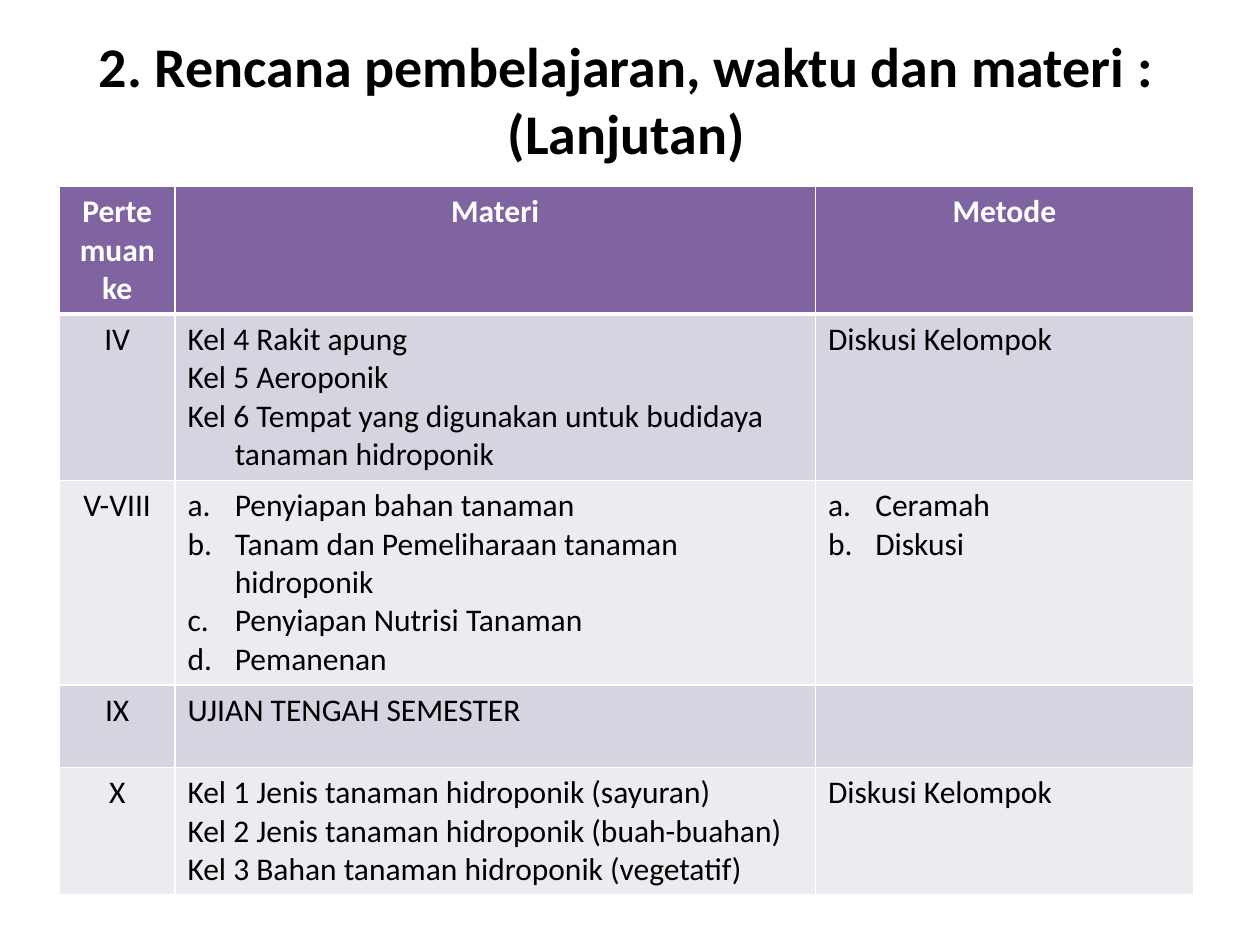
from lxml import etree
from pptx import Presentation
from pptx.dml.color import RGBColor
from pptx.enum import text
from pptx.oxml import ns
from pptx.util import Pt

BLACK = RGBColor(0, 0, 0)
WHITE = RGBColor(0xFF, 0xFF, 0xFF)
PURPLE = RGBColor(0x80, 0x64, 0xA2)
BANDS = [RGBColor(0xD8, 0xD3, 0xE0), RGBColor(0xED, 0xEA, 0xF0)]
FONT = "Calibri"
LEFT, WIDTH = 34, 648
HANGING = 27

TITLE = "2. Rencana pembelajaran, waktu dan materi : (Lanjutan)"
COLUMN_WIDTHS = [66, 366, 216]
ROW_HEIGHTS = [73, 95, 117, 47, 73]
HEADER = ["Pertemuan ke", "Materi", "Metode"]
# Meeting, topics, methods, paragraph style of topics and methods
MEETINGS = [
    ("IV", ["Kel 4 Rakit apung", "Kel 5 Aeroponik",
            "Kel 6 Tempat yang digunakan untuk budidaya tanaman hidroponik"],
     ["Diskusi Kelompok"], "hanging"),
    ("V-VIII", ["Penyiapan bahan tanaman", "Tanam dan Pemeliharaan tanaman hidroponik",
                "Penyiapan Nutrisi Tanaman", "Pemanenan"],
     ["Ceramah", "Diskusi"], "lettered"),
    ("IX", ["UJIAN TENGAH SEMESTER"], [], "plain"),
    ("X", ["Kel 1 Jenis tanaman hidroponik (sayuran)",
           "Kel 2 Jenis tanaman hidroponik (buah-buahan)",
           "Kel 3 Bahan tanaman hidroponik (vegetatif)"],
     ["Diskusi Kelompok"], "hanging"),
]


def write(frame, lines, style, size, color, bold=False):
    """Write one paragraph per line; style is centred, plain, hanging or lettered."""
    for number, line in enumerate(lines):
        para = frame.add_paragraph() if number else frame.paragraphs[0]
        para.alignment = text.PP_ALIGN.CENTER if style == "centred" else text.PP_ALIGN.LEFT
        if style in ("hanging", "lettered"):
            props = para._p.get_or_add_pPr()
            props.set("marL", str(Pt(HANGING)))
            props.set("indent", str(-Pt(HANGING)))
            if style == "lettered":
                etree.SubElement(props, ns.qn("a:buAutoNum"), type="alphaLcPeriod")
        span = para.add_run()
        span.text = line
        font = span.font
        font.name, font.size, font.bold = FONT, Pt(size), bold
        font.color.rgb = color


def add_borders(cell, top, bottom):
    props = cell._tc.get_or_add_tcPr()
    sides = [("lnL", 1), ("lnR", 1), ("lnT", top), ("lnB", bottom)]
    for position, (side, width) in enumerate(sides):
        line = etree.Element(ns.qn(f"a:{side}"), w=str(Pt(width)))
        fill = etree.SubElement(line, ns.qn("a:solidFill"))
        etree.SubElement(fill, ns.qn("a:srgbClr"), val=str(WHITE))
        props.insert(position, line)


def add_title(page):
    box = page.shapes.add_textbox(Pt(LEFT), Pt(11.5), Pt(WIDTH), Pt(90))
    frame = box.text_frame
    frame.word_wrap = True
    frame.vertical_anchor = text.MSO_ANCHOR.MIDDLE
    write(frame, [TITLE], "centred", 32, BLACK, bold=True)


def add_schedule(page):
    rows = [[([name], "centred") for name in HEADER]]
    for meeting, topics, methods, style in MEETINGS:
        rows.append([([meeting], "centred"), (topics, style), (methods, style)])
    table = page.shapes.add_table(len(rows), len(HEADER), Pt(LEFT), Pt(106.5),
                                  Pt(WIDTH), Pt(sum(ROW_HEIGHTS))).table
    for column, width in zip(table.columns, COLUMN_WIDTHS):
        column.width = Pt(width)
    for index, (row, height) in enumerate(zip(rows, ROW_HEIGHTS)):
        table.rows[index].height = Pt(height)
        header = index == 0
        for cell, (lines, style) in zip(table.rows[index].cells, row):
            cell.fill.solid()
            cell.fill.fore_color.rgb = PURPLE if header else BANDS[(index - 1) % 2]
            add_borders(cell, top=3 if index == 1 else 1, bottom=3 if header else 1)
            write(cell.text_frame, lines, style, 18, WHITE if header else BLACK, header)


def main():
    deck = Presentation()
    deck.slide_width, deck.slide_height = Pt(720), Pt(540)
    page = deck.slides.add_slide(deck.slide_layouts[6])
    add_title(page)
    add_schedule(page)
    deck.save("out.pptx")


if __name__ == "__main__":
    main()
